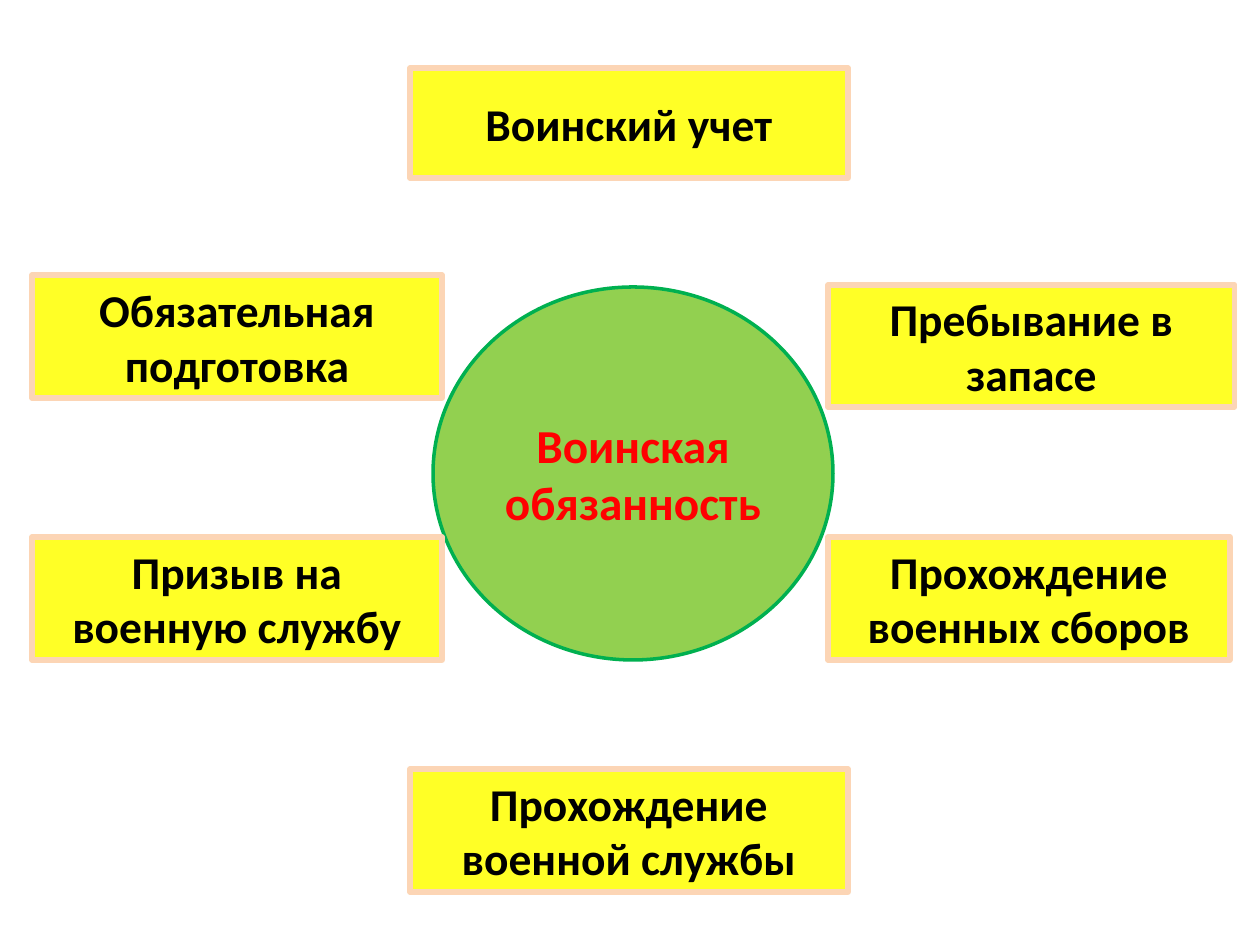
"""Build a slide with the duties that make up military obligation."""
from lxml import etree
from pptx import Presentation
from pptx.dml.color import RGBColor
from pptx.enum.shapes import MSO_SHAPE as SHAPE
from pptx.enum.text import MSO_ANCHOR as ANCHOR, MSO_AUTO_SIZE as AUTO, PP_ALIGN as ALIGN
from pptx.oxml.ns import qn
from pptx.util import Pt

PX = 914400 // 126


def rgb(color):
    return RGBColor.from_string(color)


def add_node(kind, text, box, fill, line, width, color, size):
    sp = slide.shapes.add_shape(kind, *(v * PX for v in box))
    sp.shadow.inherit = False
    sp.fill.solid()
    sp.fill.fore_color.rgb = rgb(fill)
    sp.line.color.rgb = rgb(line)
    sp.line.width = Pt(width)
    tf = sp.text_frame
    tf.text = text
    tf.word_wrap = True
    tf.vertical_anchor = ANCHOR.MIDDLE
    p = tf.paragraphs[0]
    p.alignment = ALIGN.CENTER
    font = p.runs[0].font
    font.name, font.size, font.bold = "Calibri", Pt(size), True
    font.color.rgb = rgb(color)
    return sp


prs = Presentation()
prs.slide_width, prs.slide_height = 1260 * PX, 945 * PX
slide = prs.slides.add_slide(prs.slide_layouts[6])

add_node(SHAPE.OVAL, "Воинская обязанность", (433, 287, 400, 373),
         "92D050", "00B050", 2, "FF0000", 27)

duties = [
    ("Воинский учет", (410, 68, 438, 110)),
    ("Обязательная подготовка", (32, 275, 410, 123)),
    ("Призыв на военную службу", (32, 537, 410, 123)),
    ("Прохождение военной службы", (410, 769, 438, 123)),
    ("Пребывание в запасе", (828, 285, 407, 122)),
    ("Прохождение военных сборов", (828, 537, 402, 123)),
]
for text, box in duties:
    sp = add_node(SHAPE.RECTANGLE, text, box, "FFFF00", "FCD5B5", 3, "000000", 26)
    sp.text_frame.auto_size = AUTO.SHAPE_TO_FIT_TEXT
    clr = sp.fill._xPr.find(qn("a:solidFill")).find(qn("a:srgbClr"))
    etree.SubElement(clr, qn("a:alpha"), val="85000")

prs.save("out.pptx")
